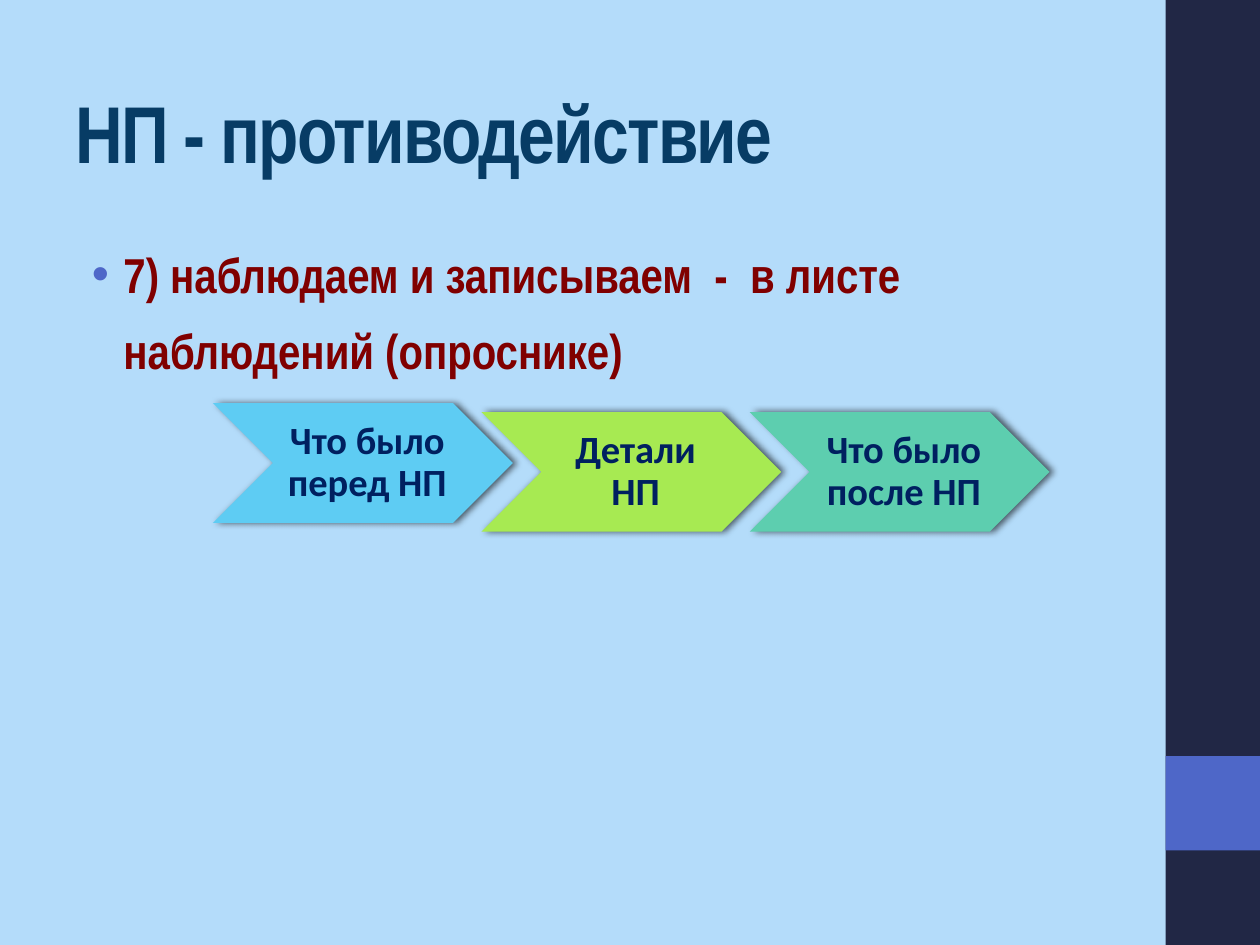
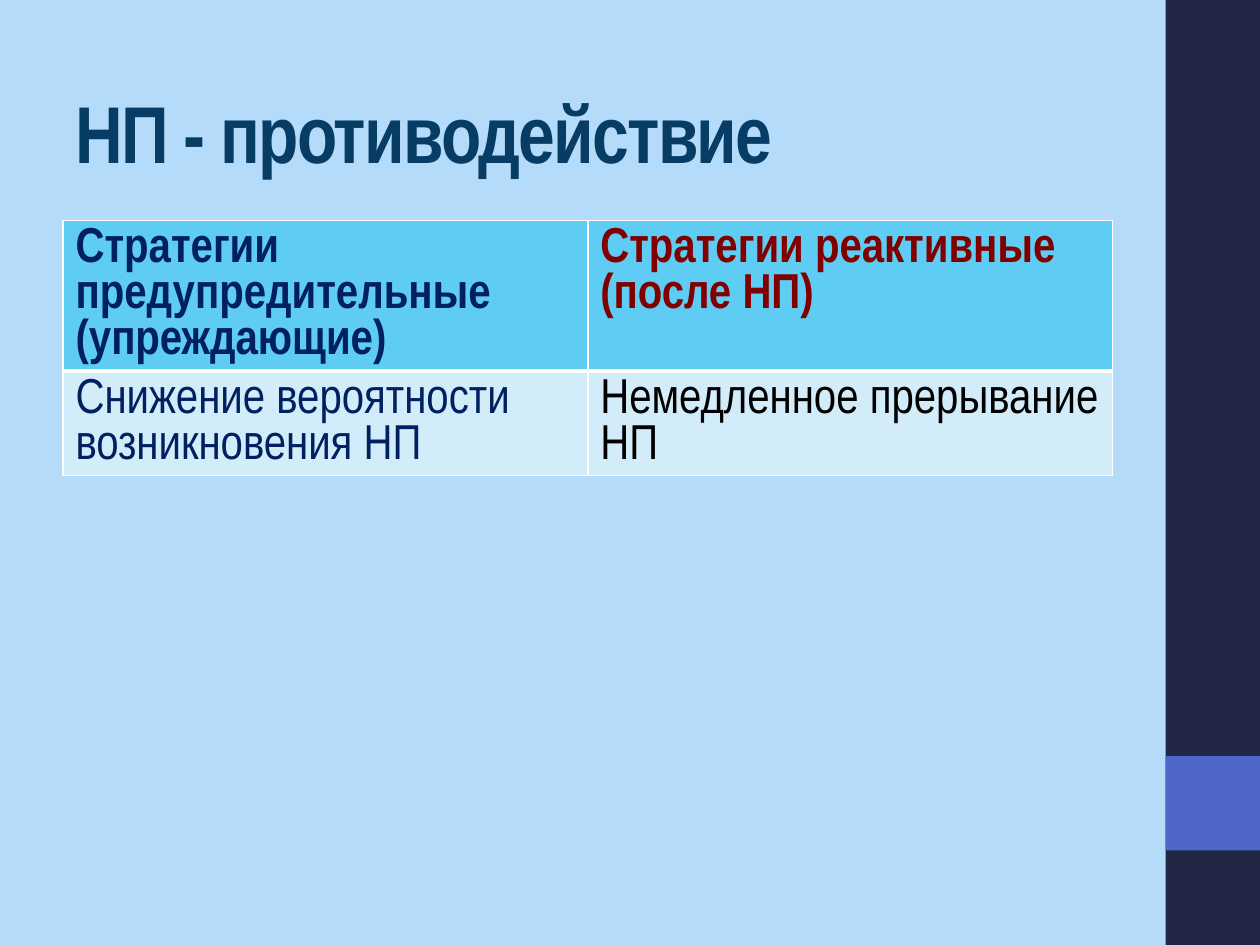
from dataclasses import dataclass

from lxml.etree import SubElement
from pptx import Presentation
from pptx.dml.color import RGBColor
from pptx.enum.shapes import MSO_SHAPE as Preset
from pptx.enum.text import MSO_ANCHOR as Anchor, MSO_AUTO_SIZE as AutoSize, PP_ALIGN as Align
from pptx.oxml import parse_xml
from pptx.oxml.ns import nsdecls, qn
from pptx.util import Inches, Pt

COLORS = {
    "background": "B4DCFA", "band": "212745", "accent": "4E67C8", "title": "073C65",
    "red": "800000", "navy": "002060", "black": "000000", "white": "FFFFFF",
    "sky": "5ECCF3", "lime": "A7EA52", "mint": "5DCEAF", "pale": "D2ECFA",
}
COLUMNS, ROWS = 40, 30
WIDTH, HEIGHT = Inches(10), Inches(7.5)
HEADING_FONT, STEP_FONT = "Arial Narrow", "Calibri"


@dataclass(frozen=True)
class Box:
    column: float
    row: float
    columns: float
    rows: float

    def place(self) -> tuple[int, int, int, int]:
        across, down = WIDTH / COLUMNS, HEIGHT / ROWS
        return (round(self.column * across), round(self.row * down),
                round(self.columns * across), round(self.rows * down))


@dataclass(frozen=True)
class Band:
    box: Box
    color: str


@dataclass(frozen=True)
class Step:
    text: str
    color: str
    row: float


@dataclass(frozen=True)
class Strategy:
    text: str
    color: str
    bold: bool
    fill: str


BANDS = [Band(Box(37, 0, 3, 30), "band"), Band(Box(37, 24, 3, 3), "accent")]
TITLE_BOX = Box(2, 1.2, 33.32, 5)
BODY_BOX = Box(2, 7, 33.32, 21)
STEP_LEFT, STEP_PITCH, STEP_WIDTH, STEP_HEIGHT = 6.76, 8.52, 9.52, 3.8
STEPS = [
    Step("Что было перед НП", "sky", 12.8),
    Step("Детали НП", "lime", 13.08),
    Step("Что было после НП", "mint", 13.08),
]
TABLE_ROWS = [4.76, 3.3]
STRATEGIES = [
    [Strategy("Стратегии предупредительные (упреждающие)", "navy", True, "sky"),
     Strategy("Стратегии реактивные (после НП)", "red", True, "sky")],
    [Strategy("Снижение вероятности возникновения НП", "navy", False, "pale"),
     Strategy("Немедленное прерывание НП", "black", False, "pale")],
]


def rgb(name: str) -> RGBColor:
    return RGBColor.from_string(COLORS[name])


def write(frame, text: str, *, font: str, size: float, color: str, bold: bool = True,
          align=Align.LEFT, line_spacing: float = 1.0, tracking: float = 0,
          bullet: str = "") -> None:
    frame.word_wrap = True
    paragraph = frame.paragraphs[0]
    paragraph.alignment = align
    paragraph.line_spacing = line_spacing
    paragraph.space_before = Pt(0)
    if bullet:
        properties = paragraph._p.get_or_add_pPr()
        properties.set("marL", str(Inches(0.38)))
        properties.set("indent", str(Inches(-0.25)))
        bullet_color = SubElement(properties, qn("a:buClr"))
        SubElement(bullet_color, qn("a:srgbClr"), val=COLORS["accent"])
        SubElement(properties, qn("a:buFont"), typeface="Arial")
        SubElement(properties, qn("a:buChar"), char=bullet)
    run = paragraph.add_run()
    run.text = text
    run.font.name, run.font.size, run.font.bold = font, Pt(size), bold
    run.font.color.rgb = rgb(color)
    if tracking:
        run._r.get_or_add_rPr().set("spc", str(round(tracking * 100)))


def add_filled(slide, preset, box: Box, color: str):
    shape = slide.shapes.add_shape(preset, *box.place())
    shape.shadow.inherit = False
    shape.fill.solid()
    shape.fill.fore_color.rgb = rgb(color)
    shape.line.fill.background()
    return shape


def move_bands_to_master(presentation, slide) -> None:
    tree = presentation.slide_master.shapes.element
    for position, band in enumerate(BANDS, start=2):
        tree.insert(position, add_filled(slide, Preset.RECTANGLE, band.box, band.color).element)


def place_placeholder(shape, box: Box, anchor) -> None:
    shape.left, shape.top, shape.width, shape.height = box.place()
    shape.text_frame.auto_size = AutoSize.NONE
    shape.text_frame.vertical_anchor = anchor


def add_titled_slide(presentation, layout_index: int):
    slide = presentation.slides.add_slide(presentation.slide_layouts[layout_index])
    title = slide.shapes.title
    place_placeholder(title, TITLE_BOX, Anchor.MIDDLE)
    write(title.text_frame, "НП - противодействие", font=HEADING_FONT, size=46,
          color="title", line_spacing=1.3, tracking=-1)
    return slide


def add_step(slide, index: int, step: Step) -> None:
    box = Box(STEP_LEFT + index * STEP_PITCH, step.row, STEP_WIDTH, STEP_HEIGHT)
    shape = add_filled(slide, Preset.CHEVRON, box, step.color)
    effects = shape.element.spPr.find(qn("a:effectLst"))
    effects.append(parse_xml(
        f'<a:outerShdw {nsdecls("a")} blurRad="{Pt(4)}" dist="{Pt(2)}" dir="0">'
        f'<a:srgbClr val="{COLORS["black"]}"><a:alpha val="60000"/></a:srgbClr></a:outerShdw>'))
    frame = shape.text_frame
    frame.margin_left = Inches(0.1)
    frame.margin_top = frame.margin_right = frame.margin_bottom = Inches(0.03)
    frame.vertical_anchor = Anchor.MIDDLE
    write(frame, step.text, font=STEP_FONT, size=22, color="navy",
          align=Align.CENTER, line_spacing=0.9)


def set_borders(cell, top: float, bottom: float) -> None:
    properties = cell._tc.get_or_add_tcPr()
    widths = {"lnL": 1, "lnR": 1, "lnT": top, "lnB": bottom}
    for position, (side, width) in enumerate(widths.items()):
        properties.insert(position, parse_xml(
            f'<a:{side} {nsdecls("a")} w="{Pt(width)}"><a:solidFill>'
            f'<a:srgbClr val="{COLORS["white"]}"/></a:solidFill></a:{side}>'))


def add_strategy_table(slide) -> None:
    box = Box(BODY_BOX.column, BODY_BOX.row, BODY_BOX.columns, sum(TABLE_ROWS))
    table = slide.shapes.add_table(len(STRATEGIES), len(STRATEGIES[0]), *box.place()).table
    for row_index, strategies in enumerate(STRATEGIES):
        table.rows[row_index].height = round(TABLE_ROWS[row_index] * HEIGHT / ROWS)
        is_header = row_index == 0
        for column_index, strategy in enumerate(strategies):
            cell = table.cell(row_index, column_index)
            cell.fill.solid()
            cell.fill.fore_color.rgb = rgb(strategy.fill)
            set_borders(cell, top=1 if is_header else 3, bottom=3 if is_header else 1)
            write(cell.text_frame, strategy.text, font=HEADING_FONT, size=28,
                  color=strategy.color, bold=strategy.bold)


def build_observation_slide(presentation):
    slide = add_titled_slide(presentation, 1)
    body = slide.placeholders[1]
    place_placeholder(body, BODY_BOX, Anchor.TOP)
    write(body.text_frame, "7) наблюдаем и записываем  -  в листе наблюдений (опроснике)",
          font=HEADING_FONT, size=28, color="red", line_spacing=1.3, bullet="•")
    for index, step in enumerate(STEPS):
        add_step(slide, index, step)
    return slide


def build_strategy_slide(presentation) -> None:
    add_strategy_table(add_titled_slide(presentation, 5))


def main() -> None:
    presentation = Presentation()
    presentation.slide_width, presentation.slide_height = WIDTH, HEIGHT
    background = presentation.slide_master.background.fill
    background.solid()
    background.fore_color.rgb = rgb("background")
    move_bands_to_master(presentation, build_observation_slide(presentation))
    build_strategy_slide(presentation)
    presentation.save("out.pptx")


if __name__ == "__main__":
    main()
